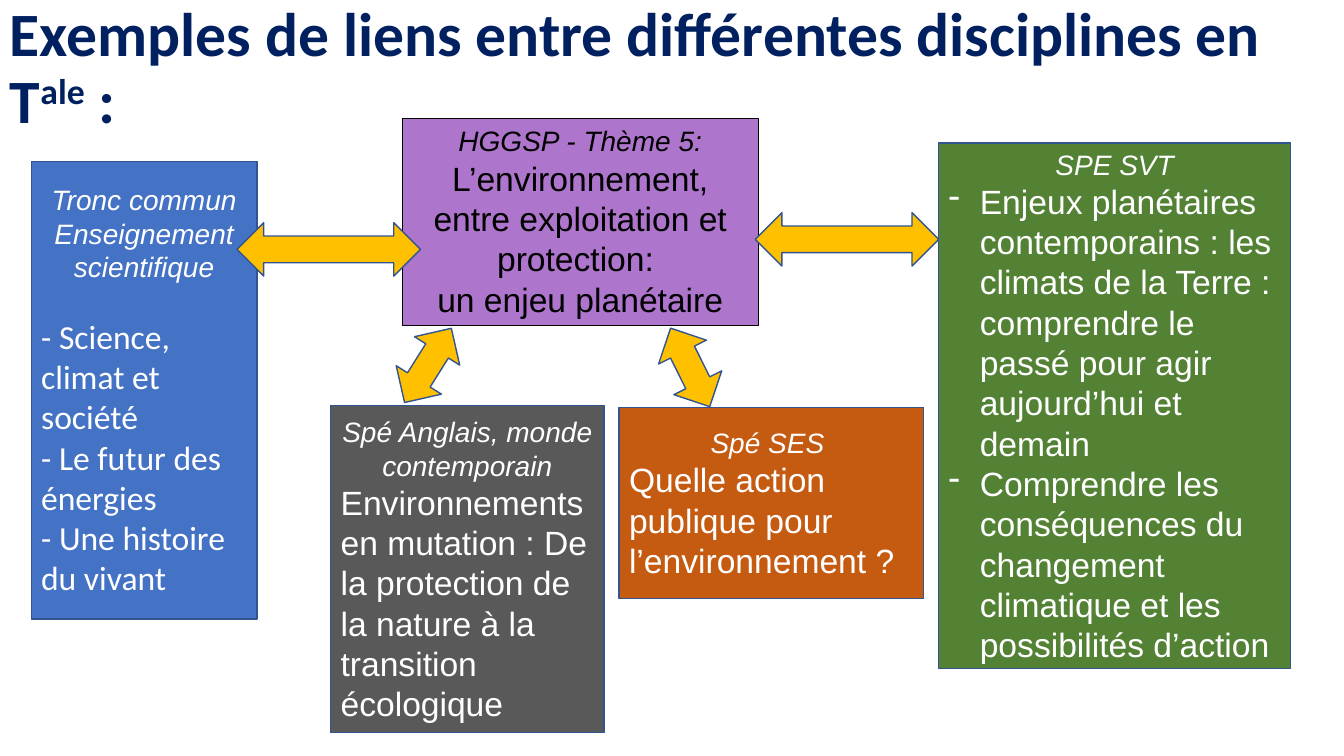
from lxml import etree
from pptx import Presentation
from pptx.dml.color import RGBColor
from pptx.enum.shapes import MSO_SHAPE as SHAPE
from pptx.enum.text import MSO_ANCHOR as ANCHOR, PP_ALIGN as ALIGN
from pptx.oxml.ns import qn
from pptx.util import Inches, Pt

NAVY = RGBColor(0x00, 0x20, 0x60)
BLACK = RGBColor(0x00, 0x00, 0x00)
WHITE = RGBColor(0xFF, 0xFF, 0xFF)
PURPLE = RGBColor(0xAE, 0x75, 0xCD)
BLUE = RGBColor(0x44, 0x72, 0xC4)
GREEN = RGBColor(0x54, 0x82, 0x35)
ORANGE = RGBColor(0xC5, 0x5A, 0x11)
GREY = RGBColor(0x59, 0x59, 0x59)
GOLD = RGBColor(0xFF, 0xC0, 0x00)
OUTLINE = RGBColor(0x32, 0x54, 0x91)


def add_run(p, text, size, color, font="Arial", bold=False, italic=False):
    r = p.add_run()
    r.text = text
    r.font.size, r.font.name = Pt(size), font
    r.font.bold, r.font.italic = bold, italic
    r.font.color.rgb = color
    return r


def add_figure(s, kind, box, fill, line=OUTLINE, weight=1):
    """Add a filled, outlined preset shape without shadow."""
    sp = s.shapes.add_shape(kind, *[Inches(v) for v in box])
    sp.shadow.inherit = False
    sp.fill.solid()
    sp.fill.fore_color.rgb = fill
    sp.line.color.rgb = line
    sp.line.width = Pt(weight)
    return sp


prs = Presentation()
prs.slide_width, prs.slide_height = Inches(13.33), Inches(7.5)
s = prs.slides.add_slide(prs.slide_layouts[6])

# Title
title = s.shapes.add_textbox(Inches(0), Inches(-0.03), Inches(13.47), Inches(1.45))
tf = title.text_frame
tf.word_wrap = True
tf.vertical_anchor = ANCHOR.MIDDLE
p = tf.paragraphs[0]
p.line_spacing = 0.9
for text, baseline in [("Exemples de liens entre différentes disciplines en T", 0),
                       ("ale", 30000), (" :", 0)]:
    r = add_run(p, text, 44, NAVY, "Calibri", bold=True)
    if baseline:
        r.font._element.set("baseline", str(baseline))

# Central theme
theme = add_figure(s, SHAPE.RECTANGLE, (3.99, 1.18, 3.53, 2.05), PURPLE, BLACK, 0.75)
tf = theme.text_frame
tf.word_wrap = True
tf.vertical_anchor = ANCHOR.TOP
p = tf.paragraphs[0]
p.alignment = ALIGN.CENTER
add_run(p, "HGGSP - Thème 5: ", 20, BLACK, italic=True)
add_run(p, "L’environnement, entre exploitation et protection: ", 24, BLACK)
p = tf.add_paragraph()
p.alignment = ALIGN.CENTER
add_run(p, "un enjeu planétaire", 24, BLACK)

# Linked subjects: box, fill, heading, gap below heading, font, bulleted, items
subjects = [
    ((0.31, 1.6, 2.24, 4.54), BLUE, "Tronc commun Enseignement scientifique", 23, "Calibri", False,
     ["- Science, climat et société", "- Le futur des énergies", "- Une histoire du vivant"]),
    ((9.31, 1.42, 3.49, 5.21), GREEN, "SPE SVT", 0, "Arial", True,
     ["Enjeux planétaires contemporains : les climats de la Terre : "
      "comprendre le passé pour agir aujourd’hui et demain",
      "Comprendre les conséquences du changement climatique et les possibilités d’action"]),
    ((6.14, 4.04, 3.02, 1.9), ORANGE, "Spé SES ", 0, "Arial", False,
     ["Quelle action publique pour l’environnement ?"]),
    ((3.28, 4.02, 2.71, 3.25), GREY, "Spé Anglais, monde contemporain", 0, "Arial", False,
     ["Environnements en mutation : De la protection de la nature à la transition écologique"]),
]
for box, fill, heading, gap, font, bulleted, items in subjects:
    tf = add_figure(s, SHAPE.RECTANGLE, box, fill).text_frame
    tf.word_wrap = True
    tf.vertical_anchor = ANCHOR.MIDDLE
    p = tf.paragraphs[0]
    p.alignment = ALIGN.CENTER
    p.space_after = Pt(gap)
    add_run(p, heading, 20, WHITE, italic=True)
    for item in items:
        p = tf.add_paragraph()
        p.alignment = ALIGN.LEFT
        add_run(p, item, 24, WHITE, font)
        if bulleted:
            pPr = p._p.get_or_add_pPr()
            pPr.set("marL", str(Inches(0.31)))
            pPr.set("indent", str(Inches(-0.31)))
            etree.SubElement(pPr, qn("a:buChar")).set("char", "-")

# Double arrows between the theme and each subject
for left, top, width, angle in [(2.35, 2.21, 1.82, 0), (7.49, 2.11, 1.82, 0),
                                (3.81, 3.36, 0.87, 302.2), (6.41, 3.38, 0.87, 243.5)]:
    arrow = add_figure(s, SHAPE.LEFT_RIGHT_ARROW, (left, top, width, 0.53), GOLD)
    arrow.rotation = angle

prs.save("out.pptx")
